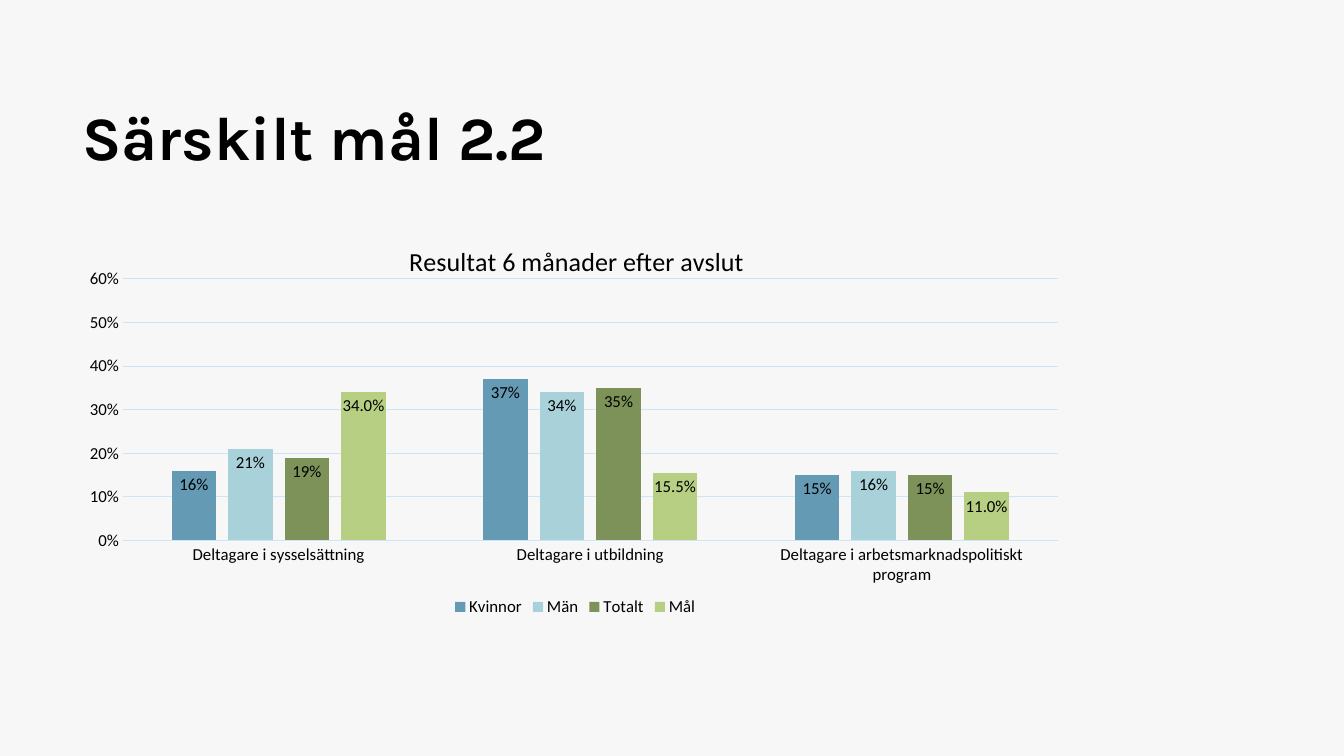
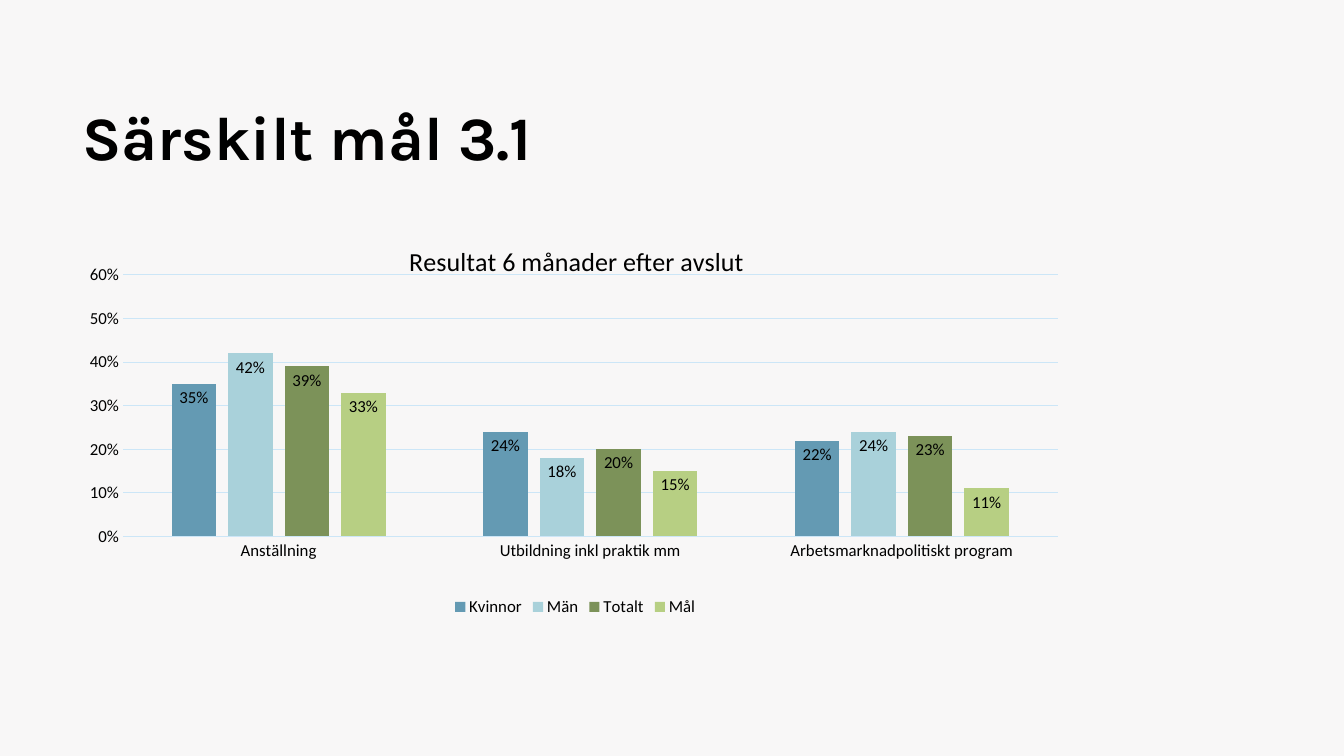
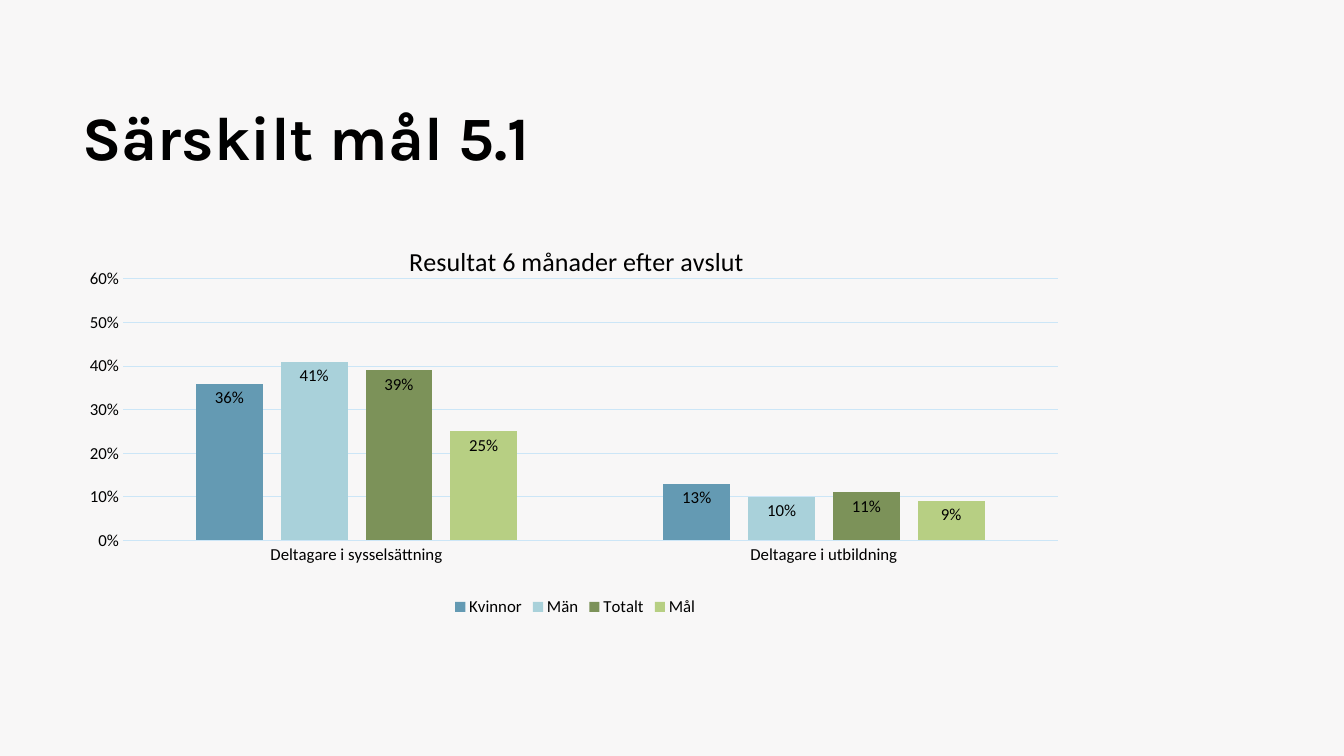
from dataclasses import dataclass

from lxml.etree import SubElement
from pptx import Presentation
from pptx.chart.chart import Chart
from pptx.chart.data import CategoryChartData
from pptx.dml.color import RGBColor
from pptx.enum.chart import XL_CHART_TYPE, XL_LABEL_POSITION, XL_LEGEND_POSITION, XL_TICK_MARK
from pptx.enum.text import MSO_ANCHOR
from pptx.oxml.ns import qn
from pptx.slide import Slide
from pptx.text.text import Font
from pptx.util import Inches, Pt


@dataclass(frozen=True)
class Theme:
    background: str = "F8F7F7"
    text: str = "000000"
    chart_text: str = "104161"
    grid: str = "CCE6F7"
    series: tuple[str, ...] = ("649AB3", "A9D1DA", "7C9259", "B7CF83")
    title_font: str = "Karla"
    body_font: str = "Calibri"
    title_size: float = 44
    chart_title_size: float = 18.6
    label_size: float = 12
    chart_size: float = 10


@dataclass(frozen=True)
class ResultSlide:
    title: str
    categories: tuple[str, ...]
    values: tuple[tuple[float, ...], ...]  # one row per series
    plot_top: float = 0.15
    goal_format: str = "0%"


THEME = Theme()
LEFT, WIDTH = Inches(0.72), Inches(9.97)
CHART_TITLE = "Resultat 6 månader efter avslut"
SERIES_NAMES = ("Kvinnor", "Män", "Totalt", "Mål")

RESULTS = (
    ResultSlide(
        "Särskilt mål 2.2",
        ("Deltagare i sysselsättning", "Deltagare i utbildning",
         "Deltagare i arbetsmarknadspolitiskt program"),
        ((0.16, 0.37, 0.15), (0.21, 0.34, 0.16), (0.19, 0.35, 0.15), (0.34, 0.155, 0.11)),
        goal_format="0.0%",
    ),
    ResultSlide(
        "Särskilt mål 3.1",
        ("Anställning", "Utbildning inkl praktik mm", "Arbetsmarknadpolitiskt program"),
        ((0.35, 0.24, 0.22), (0.42, 0.18, 0.24), (0.39, 0.2, 0.23), (0.33, 0.15, 0.11)),
        plot_top=0.14,
    ),
    ResultSlide(
        "Särskilt mål 5.1",
        ("Deltagare i sysselsättning", "Deltagare i utbildning"),
        ((0.36, 0.13), (0.41, 0.1), (0.39, 0.11), (0.25, 0.09)),
    ),
)


def style_font(font: Font, size: float, name: str = THEME.body_font,
               color: str = THEME.text, bold: bool = False) -> None:
    font.name, font.size, font.bold = name, Pt(size), bold
    font.color.rgb = RGBColor.from_string(color)


def set_layout(parent, index: int, **settings: str | float) -> None:
    """Give a chart part a manual layout, as its child number index."""
    for old_layout in parent.findall(qn("c:layout")):
        parent.remove(old_layout)
    layout = SubElement(parent, qn("c:layout"))
    manual = SubElement(layout, qn("c:manualLayout"))
    for tag, value in settings.items():
        SubElement(manual, qn(f"c:{tag}")).set("val", str(value))
    parent.insert(index, layout)


def add_title(slide: Slide, text: str) -> None:
    frame = slide.shapes.add_textbox(LEFT, Inches(0.62), WIDTH, Inches(1.45)).text_frame
    frame.word_wrap = True
    frame.vertical_anchor = MSO_ANCHOR.MIDDLE
    run = frame.paragraphs[0].add_run()
    run.text = text
    style_font(run.font, THEME.title_size, THEME.title_font, bold=True)


def style_axes(chart: Chart) -> None:
    for axis in (chart.category_axis, chart.value_axis):
        axis.major_tick_mark = axis.minor_tick_mark = XL_TICK_MARK.NONE
        style_font(axis.tick_labels.font, THEME.label_size)
    value_axis = chart.value_axis
    value_axis.minimum_scale, value_axis.maximum_scale = 0, 0.6
    value_axis.major_unit = 0.1
    value_axis.tick_labels.number_format = "0%"
    value_axis.tick_labels.number_format_is_linked = False
    value_axis.format.line.fill.background()
    value_axis.has_major_gridlines = True
    for line in (chart.category_axis.format.line, value_axis.major_gridlines.format.line):
        line.width = Pt(0.75)
        line.color.rgb = RGBColor.from_string(THEME.grid)


def style_series(chart: Chart, goal_format: str) -> None:
    plot = chart.plots[0]
    plot.gap_width, plot.overlap = 219, -27
    plot.vary_by_categories = False
    for series, color in zip(plot.series, THEME.series):
        series.format.fill.solid()
        series.format.fill.fore_color.rgb = RGBColor.from_string(color)
        labels = series.data_labels
        labels.show_value = True
        labels.position = XL_LABEL_POSITION.INSIDE_END
        labels.number_format = goal_format if series.name == SERIES_NAMES[-1] else "0%"
        labels.number_format_is_linked = False
        style_font(labels.font, THEME.label_size)


def add_result_chart(slide: Slide, result: ResultSlide) -> None:
    data = CategoryChartData(number_format="0%")
    data.categories = result.categories
    for name, values in zip(SERIES_NAMES, result.values):
        data.add_series(name, values)
    chart = slide.shapes.add_chart(
        XL_CHART_TYPE.COLUMN_CLUSTERED, LEFT, Inches(2.17), WIDTH, Inches(3.99), data).chart
    style_font(chart.font, THEME.chart_size, color=THEME.chart_text)

    # Chart title
    chart.has_title = True
    run = chart.chart_title.text_frame.paragraphs[0].add_run()
    run.text = CHART_TITLE
    style_font(run.font, THEME.chart_title_size)
    set_layout(chart.chart_title._element, 1, xMode="edge", yMode="edge", x=0.33, y=0.05)

    # Legend
    chart.has_legend = True
    chart.legend.position = XL_LEGEND_POSITION.BOTTOM
    chart.legend.include_in_layout = False
    style_font(chart.legend.font, THEME.label_size)

    # Plot
    style_axes(chart)
    style_series(chart, result.goal_format)
    plot_area = chart._chartSpace.find(f"{qn('c:chart')}/{qn('c:plotArea')}")
    set_layout(plot_area, 0, layoutTarget="inner", xMode="edge", yMode="edge",
               x=0.05, y=result.plot_top, w=0.93, h=0.65)


def main() -> None:
    presentation = Presentation()
    presentation.slide_width, presentation.slide_height = Inches(13.33), Inches(7.5)
    blank_layout = presentation.slide_layouts[6]

    # Shared background
    background = presentation.slide_master.background.fill
    background.solid()
    background.fore_color.rgb = RGBColor.from_string(THEME.background)

    for result in RESULTS:
        slide = presentation.slides.add_slide(blank_layout)
        add_title(slide, result.title)
        add_result_chart(slide, result)
    presentation.save("out.pptx")


if __name__ == "__main__":
    main()
